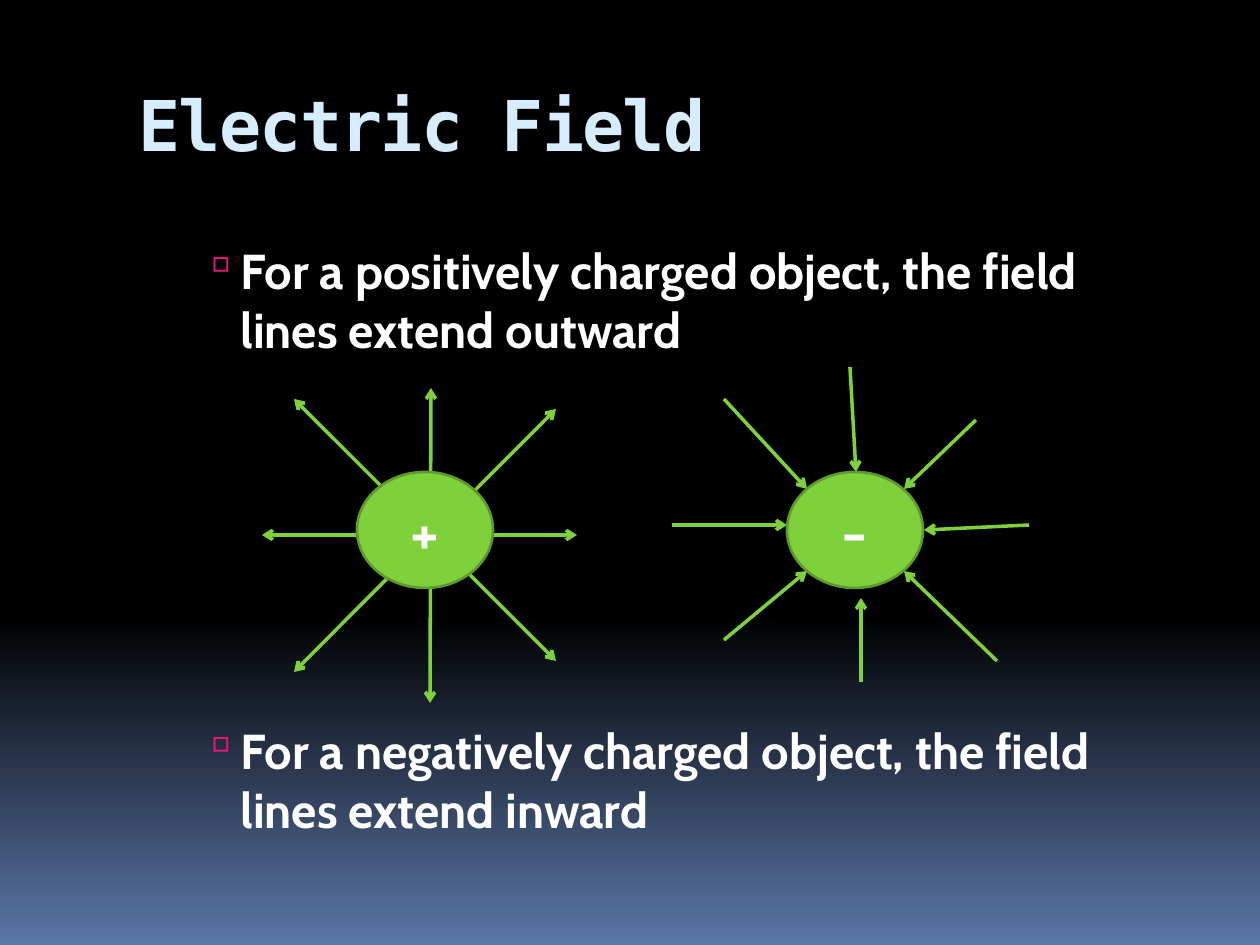
"""Build the Electric Field slide."""
from copy import deepcopy
from dataclasses import dataclass

from lxml.etree import SubElement
from pptx import Presentation
from pptx.dml.color import RGBColor
from pptx.enum.shapes import MSO_CONNECTOR, MSO_SHAPE
from pptx.enum.text import MSO_ANCHOR, PP_ALIGN
from pptx.oxml.ns import qn
from pptx.util import Emu, Pt

EMU_PER_PX = 914400 / 126
GREEN, DARK_GREEN, WHITE, PINK = "7FD13B", "5E9B2C", "FFFFFF", "EA157A"
BLACK, BLUE, PALE_BLUE = "000000", "5B77A8", "D6ECFF"
BODY_FONT = {"name": "Cabin", "bold": True}
CHARGE_SIZE = (136, 116)


@dataclass(frozen=True)
class FieldLine:
    """A field line from start to end, with an arrow at the end or at both."""

    start: tuple[int, int]
    end: tuple[int, int]
    both: bool = False


@dataclass(frozen=True)
class Charge:
    """A charged object with its field lines."""

    sign: str
    corner: tuple[int, int]
    lines: tuple[FieldLine, ...]


@dataclass(frozen=True)
class Bullet:
    """A bulleted statement and the space above it in points."""

    text: str
    space_before: int


CHARGES = (
    Charge("+", (357, 472), (
        FieldLine((262, 535), (577, 535), True),
        FieldLine((431, 388), (430, 703), True),
        FieldLine((556, 409), (294, 672), True),
        FieldLine((294, 399), (556, 661), True),
    )),
    Charge("-", (787, 472), (
        FieldLine((724, 399), (807, 489)),
        FieldLine((997, 661), (904, 571)),
        FieldLine((850, 367), (856, 472)),
        FieldLine((672, 525), (787, 525)),
        FieldLine((724, 640), (807, 571)),
        FieldLine((861, 682), (861, 598)),
        FieldLine((976, 420), (904, 489)),
        FieldLine((1029, 525), (924, 530)),
    )),
)
BULLETS = (
    Bullet("For a positively charged object, the field lines extend outward", 0),
    Bullet("For a negatively charged object, the field lines extend inward", 207),
)


def px(length: int) -> Emu:
    """Turn px into EMU."""
    return Emu(round(length * EMU_PER_PX))


def rgb(value: str) -> RGBColor:
    """Turn a hex string into a colour."""
    return RGBColor.from_string(value)


def apply(target, values: dict) -> None:
    """Set each value as an attribute of the target."""
    for name, value in values.items():
        setattr(target, name, value)


def write(para, text: str, color: str, values: dict):
    """Add one formatted span to a paragraph and return it."""
    span = para.add_run()
    span.text = text
    apply(span.font, values)
    span.font.color.rgb = rgb(color)
    return span


def paint_background(page) -> None:
    """Fill the page with black that fades to blue at the bottom."""
    fill = page.background.fill
    fill.gradient()
    fill.gradient_angle = 270
    stop_list = next(page.element.iter(qn("a:gsLst")))
    stop_list.insert(0, deepcopy(stop_list[0]))
    stops = zip(fill.gradient_stops, (0, 0.65, 1), (BLACK, BLACK, BLUE))
    for stop, position, color in stops:
        stop.position = position
        stop.color.rgb = rgb(color)


def add_title(page, text: str) -> None:
    """Place and format the title placeholder."""
    title = page.shapes.title
    apply(title, {"left": px(126), "top": px(71), "width": px(1071), "height": px(126)})
    apply(title.text_frame, {"vertical_anchor": MSO_ANCHOR.TOP, "margin_top": px(11), "word_wrap": True})
    para = title.text_frame.paragraphs[0]
    para.alignment = PP_ALIGN.LEFT
    span = write(para, text, PALE_BLUE, {"name": "DejaVu Sans Mono", "size": Pt(40), "bold": True})
    span.font._element.set("spc", "-100")


def add_bullets(page, bullets: tuple[Bullet, ...]) -> None:
    """Write the bulleted statements in one text box."""
    box = page.shapes.add_textbox(px(126), px(231), px(1071), px(630))
    frame = box.text_frame
    apply(frame, {"word_wrap": True, "margin_top": px(10)})
    for index, bullet in enumerate(bullets):
        para = frame.add_paragraph() if index else frame.paragraphs[0]
        para.space_before = Pt(bullet.space_before)
        write(para, bullet.text, WHITE, BODY_FONT | {"size": Pt(28)})
        properties = para._p.get_or_add_pPr()
        properties.set("marL", str(px(102)))
        properties.set("indent", str(px(-39)))
        color = SubElement(properties, qn("a:buClr"))
        SubElement(color, qn("a:srgbClr"), val=PINK)
        SubElement(properties, qn("a:buSzPct"), val="90000")
        SubElement(properties, qn("a:buChar"), char="▫")


def add_field_line(group, line: FieldLine) -> None:
    """Draw one field line with open arrowheads."""
    connector = group.shapes.add_connector(MSO_CONNECTOR.STRAIGHT, *map(px, line.start + line.end))
    connector.line.color.rgb = rgb(GREEN)
    connector.line.width = Pt(2)
    outline = connector.line._get_or_add_ln()
    for tag in ("a:headEnd", "a:tailEnd") if line.both else ("a:tailEnd",):
        SubElement(outline, qn(tag), type="arrow")
    SubElement(connector._element.spPr, qn("a:effectLst"))


def add_charge(page, charge: Charge) -> None:
    """Draw a charged object over its field lines."""
    group = page.shapes.add_group_shape()
    for line in charge.lines:
        add_field_line(group, line)
    ball = group.shapes.add_shape(MSO_SHAPE.OVAL, *map(px, charge.corner + CHARGE_SIZE))
    ball.shadow.inherit = False
    ball.fill.solid()
    ball.fill.fore_color.rgb = rgb(GREEN)
    ball.line.color.rgb = rgb(DARK_GREEN)
    ball.line.width = Pt(1.5)
    ball.text_frame.vertical_anchor = MSO_ANCHOR.MIDDLE
    para = ball.text_frame.paragraphs[0]
    para.alignment = PP_ALIGN.CENTER
    write(para, charge.sign, WHITE, BODY_FONT | {"size": Pt(36)})


def main() -> None:
    """Build and save the deck."""
    deck = Presentation()
    apply(deck, {"slide_width": px(1260), "slide_height": px(945)})
    page = deck.slides.add_slide(deck.slide_layouts.get_by_name("Title Only"))
    paint_background(page)
    add_title(page, "Electric Field")
    add_bullets(page, BULLETS)
    for charge in CHARGES:
        add_charge(page, charge)
    deck.save("out.pptx")


if __name__ == "__main__":
    main()
